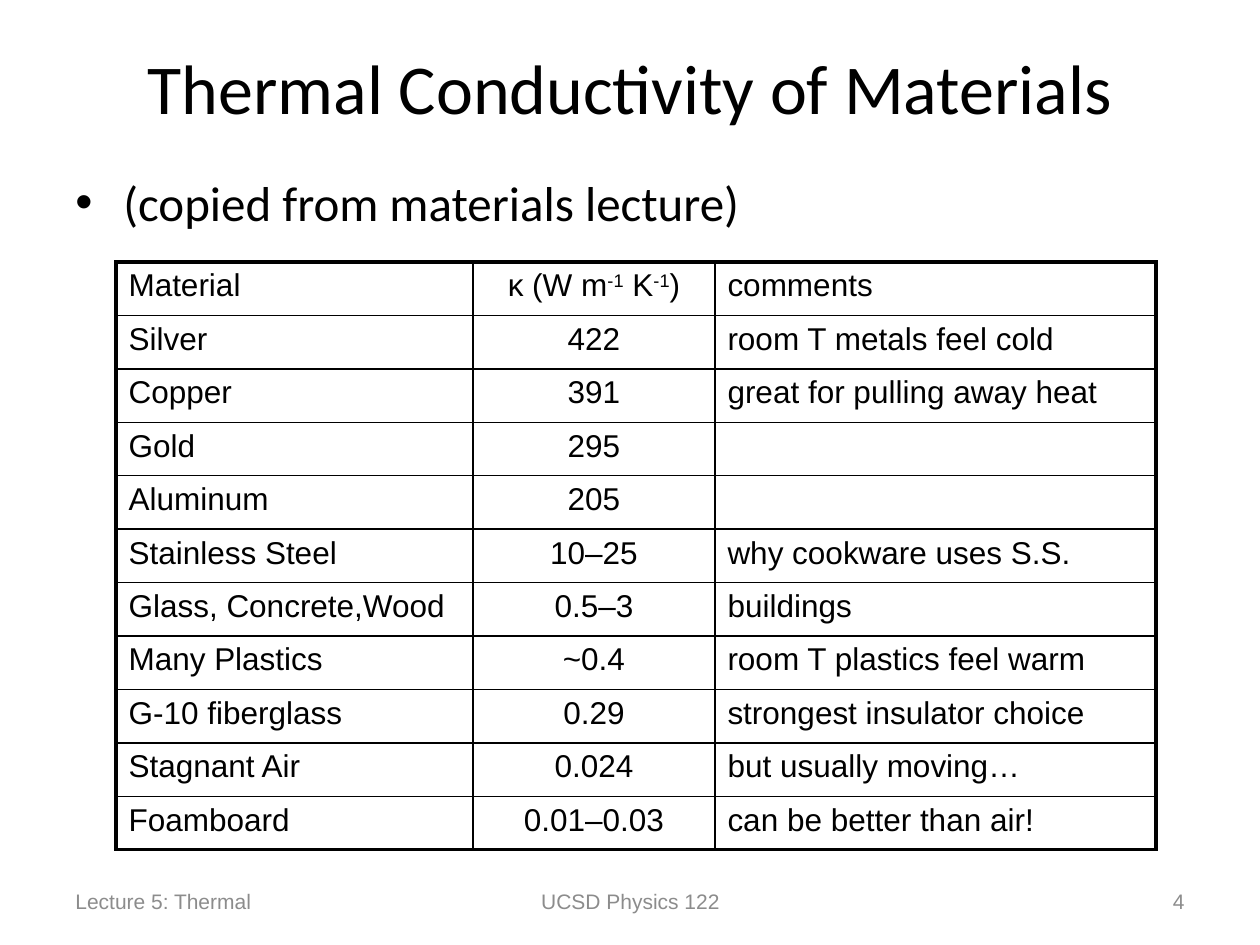
from lxml import etree
from pptx import Presentation
from pptx import util as u
from pptx.dml.color import RGBColor
from pptx.enum import text
from pptx.oxml.ns import qn

PX = 914400 / 126  # EMU in one px
COLORS = {"ink": "000000", "footer": "8C8C8C"}
LEFT, CENTER, RIGHT = text.PP_ALIGN.LEFT, text.PP_ALIGN.CENTER, text.PP_ALIGN.RIGHT
MIDDLE, TOP = text.MSO_ANCHOR.MIDDLE, text.MSO_ANCHOR.TOP


def add_run(p, words, size, font, color="ink", baseline=0):
    r = p.add_run()
    r.text = words
    r.font.size = u.Pt(size)
    r.font.name = font
    r.font.color.rgb = RGBColor.from_string(COLORS[color])
    if baseline:
        r._r.get_or_add_rPr().set("baseline", str(baseline))


def add_text(box, words, size, font, align, anchor, color="ink"):
    sp = s.shapes.add_textbox(*[u.Emu(round(v * PX)) for v in box])
    tf = sp.text_frame
    tf.word_wrap = True
    tf.vertical_anchor = anchor
    p = tf.paragraphs[0]
    p.alignment = align
    add_run(p, words, size, font, color)
    return p


prs = Presentation()
prs.slide_width, prs.slide_height = u.Inches(10), u.Inches(7.5)
s = prs.slides.add_slide(prs.slide_layouts[6])

# Footer
for x, w, words, align in [
    (63, 294, "Lecture 5: Thermal", LEFT),
    (431, 399, "UCSD Physics 122", CENTER),
    (903, 294, "4", RIGHT),
]:
    add_text((x, 876, w, 50), words, 12, "Arial", align, MIDDLE, "footer")

# Title and bullet
add_text((63, 8, 1134, 157), "Thermal Conductivity of Materials", 40, "Calibri", CENTER, MIDDLE)
p = add_text((63, 166, 1134, 624), "(copied from materials lecture)", 28, "Calibri", LEFT, TOP)
pPr = p._p.get_or_add_pPr()
indent = round(48 * PX)
pPr.set("marL", str(indent))
pPr.set("indent", str(-indent))
etree.SubElement(pPr, qn("a:buFont")).set("typeface", "Arial")
etree.SubElement(pPr, qn("a:buChar")).set("char", "•")

# Conductivity table: material, conductivity, comment
rows = [
    ("Material", "κ (W m^-1^ K^-1^)", "comments"),  # ^ switches superscript
    ("Silver", "422", "room T metals feel cold"),
    ("Copper", "391", "great for pulling away heat"),
    ("Gold", "295", ""),
    ("Aluminum", "205", ""),
    ("Stainless Steel", "10–25", "why cookware uses S.S."),
    ("Glass, Concrete,Wood", "0.5–3", "buildings"),
    ("Many Plastics", "~0.4", "room T plastics feel warm"),
    ("G-10 fiberglass", "0.29", "strongest insulator choice"),
    ("Stagnant Air", "0.024", "but usually moving…"),
    ("Foamboard", "0.01–0.03", "can be better than air!"),
]
widths = [357, 242, 441]
height = 588
last_row, last_col = len(rows) - 1, len(widths) - 1
frame = s.shapes.add_table(len(rows), len(widths), *[
    u.Emu(round(v * PX)) for v in (116, 262, sum(widths), height)])
tbl = frame.table
tbl.first_row = tbl.horz_banding = False
for col, w in zip(tbl.columns, widths):
    col.width = u.Emu(round(w * PX))

for i, row in enumerate(rows):
    tbl.rows[i].height = u.Emu(round(height * PX / len(rows)))
    for j, words in enumerate(row):
        cell = tbl.cell(i, j)
        cell.fill.background()
        p = cell.text_frame.paragraphs[0]
        p.alignment = CENTER if j == 1 else LEFT
        if words:
            for k, part in enumerate(words.split("^")):
                add_run(p, part, 18, "Arial", baseline=30000 * (k % 2))

        # Borders: heavy on the outside edge, thin inside
        outer = {"L": j == 0, "R": j == last_col, "T": i == 0, "B": i == last_row}
        tcPr = cell._tc.get_or_add_tcPr()
        for k, (side, heavy) in enumerate(outer.items()):
            ln = etree.Element(qn("a:ln" + side))
            ln.set("w", str(u.Pt(2.25 if heavy else 1)))
            fill = etree.SubElement(ln, qn("a:solidFill"))
            etree.SubElement(fill, qn("a:srgbClr")).set("val", COLORS["ink"])
            tcPr.insert(k, ln)

prs.save("out.pptx")
